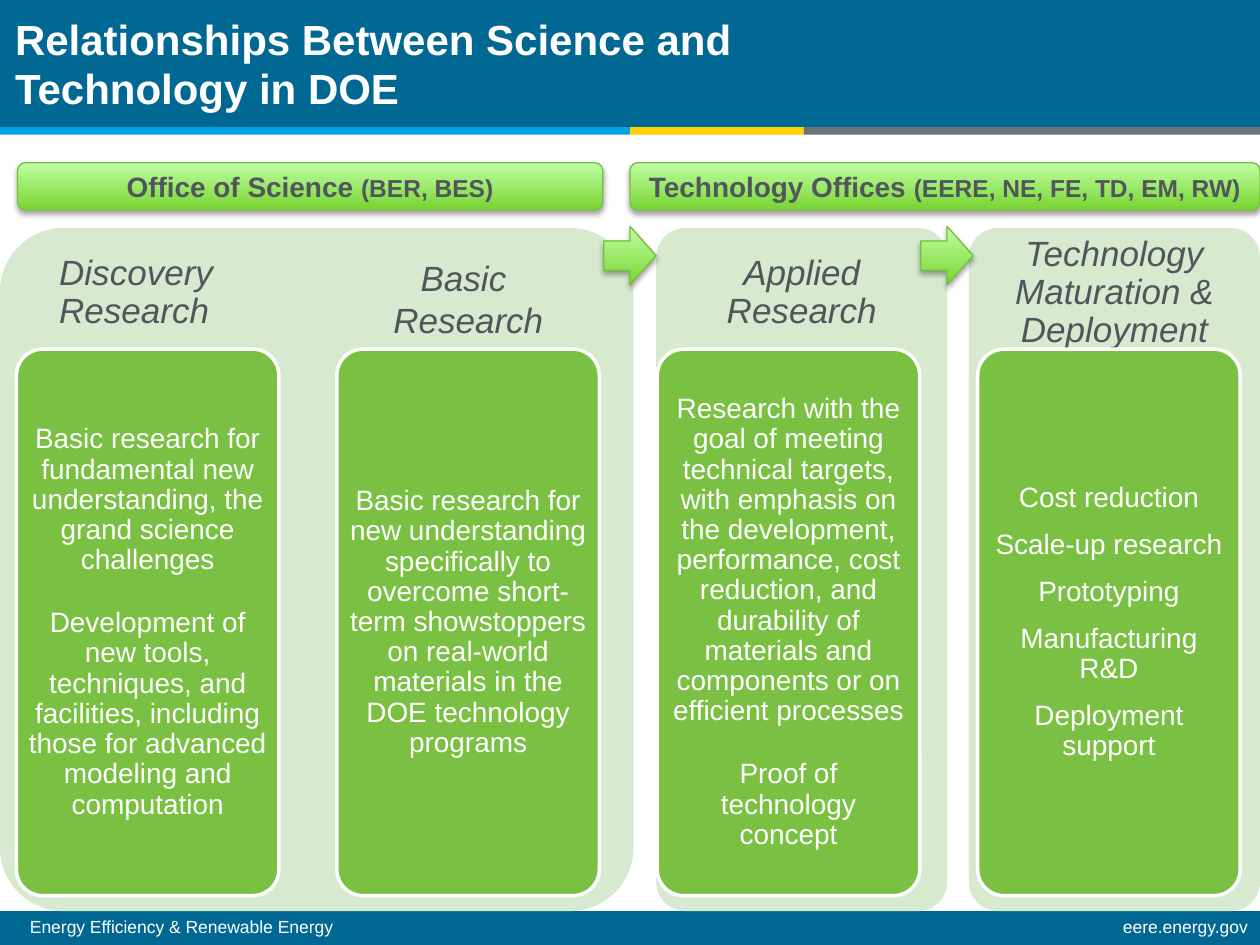
from lxml import etree
from pptx import Presentation
from pptx.dml.color import RGBColor
from pptx.enum.shapes import MSO_SHAPE
from pptx.enum.text import MSO_ANCHOR, PP_ALIGN
from pptx.oxml import parse_xml
from pptx.util import Pt

RECT, ROUND = MSO_SHAPE.RECTANGLE, MSO_SHAPE.ROUNDED_RECTANGLE
ARROW = MSO_SHAPE.RIGHT_ARROW
LEFT, MID, RIGHT = PP_ALIGN.LEFT, PP_ALIGN.CENTER, PP_ALIGN.RIGHT

WHITE = RGBColor(0xFF, 0xFF, 0xFF)
NAVY = RGBColor(0x00, 0x68, 0x92)
SKY = RGBColor(0x00, 0xA4, 0xE4)
GOLD = RGBColor(0xFF, 0xD2, 0x00)
GRAY = RGBColor(0x6A, 0x73, 0x7B)
INK = RGBColor(0x50, 0x56, 0x5C)
PALE = RGBColor(0xD7, 0xE9, 0xCF)
GREEN = RGBColor(0x7A, 0xC1, 0x43)
EDGE = RGBColor(0x77, 0xC0, 0x3E)
DARK = RGBColor(0x78, 0xD4, 0x30)
LIGHT = RGBColor(0xC0, 0xFF, 0xA4)

WIDE, HIGH = 720, 540
TITLE = "Relationships Between Science and Technology in DOE"
# left, top, width, height, colour
BARS = [
    (0, 0, WIDE, 72.7, NAVY),
    (0, 520.6, WIDE, 19.4, NAVY),
    (0, 72.7, 360, 4.3, SKY),
    (360, 72.7, 99.4, 4.3, GOLD),
    (459.4, 72.7, 260.6, 4.3, GRAY),
]
# text, left, width, alignment
FOOTS = [
    ("Energy Efficiency & Renewable Energy", 10, 574, LEFT),
    ("eere.energy.gov", 431.4, 288.6, RIGHT),
]
# office, its members, left, width
BANNERS = [
    ("Office of Science ", "(BER, BES)", 10, 334.4),
    ("Technology Offices ", "(EERE, NE, FE, TD, EM, RW)", 360, 360),
]
# left, width
PANELS = [(0, 362), (375, 166.3), (553.7, 166.3)]
# lines, left, width, middle height, alignment, line spacing
HEADS = [
    (["Discovery", "Research"], 28, 140, 167.4, LEFT, 0.9),
    (["Basic ", "Research"], 187, 161.3, 170.5, MID, 1.0),
    (["Applied Research"], 375, 166.3, 167.4, MID, 0.9),
    (["Technology Maturation & Deployment"], 553.7, 166.3, 167.4, MID, 0.9),
]
# gap between paragraphs, paragraphs
CARDS = [
    (18.8, ["Basic research for fundamental new understanding, the grand "
            "science challenges",
            "Development of new tools, techniques, and facilities, including "
            "those for advanced modeling and computation"]),
    (0, ["Basic research for new understanding specifically to overcome "
         "short-term showstoppers on real-world materials in the DOE "
         "technology programs"]),
    (18.8, ["Research with the goal of meeting technical targets, with "
            "emphasis on the development, performance, cost reduction, and "
            "durability of materials and components or on efficient processes",
            "Proof of technology concept"]),
    (9.6, ["Cost reduction", "Scale-up research", "Prototyping",
           "Manufacturing R&D", "Deployment support"]),
]
CARD_X, CARD_STEP = 9.4, 183.1
ARROW_X = [345, 526.2]

SHADOW = (
    '<a:effectLst xmlns:a="http://schemas.openxmlformats.org/drawingml/2006/main">'
    '<a:outerShdw blurRad="39400" dist="22900" dir="5400000" rotWithShape="0">'
    '<a:srgbClr val="000000"><a:alpha val="35000"/></a:srgbClr>'
    '</a:outerShdw></a:effectLst>')

prs = Presentation()
prs.slide_width, prs.slide_height = Pt(WIDE), Pt(HIGH)
slide = prs.slides.add_slide(prs.slide_layouts[5])


def place(kind, x, y, w, h, fill=None, line=None, thick=0.75):
    shape = slide.shapes.add_shape(kind, Pt(x), Pt(y), Pt(w), Pt(h))
    shape.shadow.inherit = False
    if fill is not None:
        shape.fill.solid()
        shape.fill.fore_color.rgb = fill
    if line is None:
        shape.line.fill.background()
    else:
        shape.line.color.rgb = line
        shape.line.width = Pt(thick)
    return shape


def gloss(kind, x, y, w, h):
    """Add a shape with a green gradient and a soft drop shadow."""
    shape = place(kind, x, y, w, h, line=EDGE)
    shape.fill.gradient()
    shape.fill.gradient_angle = 90
    for stop, color in zip(shape.fill.gradient_stops, (DARK, LIGHT)):
        stop.color.rgb = color
    props = shape._element.spPr
    old = props.find("{*}effectLst")
    props.replace(old, parse_xml(SHADOW))
    return shape


def frame(shape, side=7.2, edge=3.6, anchor=MSO_ANCHOR.MIDDLE):
    text = shape.text_frame
    text.word_wrap = True
    text.vertical_anchor = anchor
    text.margin_left = text.margin_right = Pt(side)
    text.margin_top = text.margin_bottom = Pt(edge)
    return text


def box(x, y, w, h, **kind):
    return frame(slide.shapes.add_textbox(Pt(x), Pt(y), Pt(w), Pt(h)), **kind)


def write(para, text, size, color, bold=False, italic=False):
    run = para.add_run()
    run.text = text
    font = run.font
    font.name, font.size, font.color.rgb = "Arial", Pt(size), color
    font.bold, font.italic = bold, italic


title = slide.shapes.title
for *spot, color in BARS:
    bar = place(RECT, *spot, color)
    title._element.addprevious(bar._element)

title.left, title.top, title.width, title.height = Pt(1.4), Pt(5), Pt(445.7), Pt(62.6)
para = frame(title).paragraphs[0]
para.alignment, para.line_spacing = LEFT, Pt(28)
write(para, TITLE, 24, WHITE, bold=True)

for text, x, w, align in FOOTS:
    para = box(x, 521.3, w, 18.7, anchor=MSO_ANCHOR.TOP).paragraphs[0]
    para.alignment, para.line_spacing = align, 0.9
    write(para, text, 10, WHITE)

for x, w in PANELS:
    panel = place(ROUND, x, 130.3, w, 390.3, PALE)
    panel.adjustments[0] = 0.1

for lines, x, w, mid, align, space in HEADS:
    para = box(x, mid - 36, w, 72, side=5.8, edge=0).paragraphs[0]
    para.alignment, para.line_spacing = align, space
    for i, text in enumerate(lines):
        if i:
            para.add_line_break()
        write(para, text, 20, INK, italic=True)

for x in ARROW_X:
    gloss(ARROW, x, 129.4, 29.9, 33.4)

for office, parts, x, w in BANNERS:
    para = frame(gloss(ROUND, x, 93, w, 27)).paragraphs[0]
    para.alignment = MID
    write(para, office, 16, INK, bold=True)
    write(para, parts, 14, INK, bold=True)

for i, (gap, items) in enumerate(CARDS):
    card = place(ROUND, CARD_X + i * CARD_STEP, 199.5, 150, 312.3, GREEN, WHITE, 2)
    card.adjustments[0] = 0.1
    body = frame(card, side=2.2, edge=2.2)
    for j, text in enumerate(items):
        para = body.add_paragraph() if j else body.paragraphs[0]
        para.alignment, para.line_spacing = MID, 0.9
        if j:
            para.space_before = Pt(gap)
        write(para, text, 16, WHITE)

prs.save("out.pptx")
